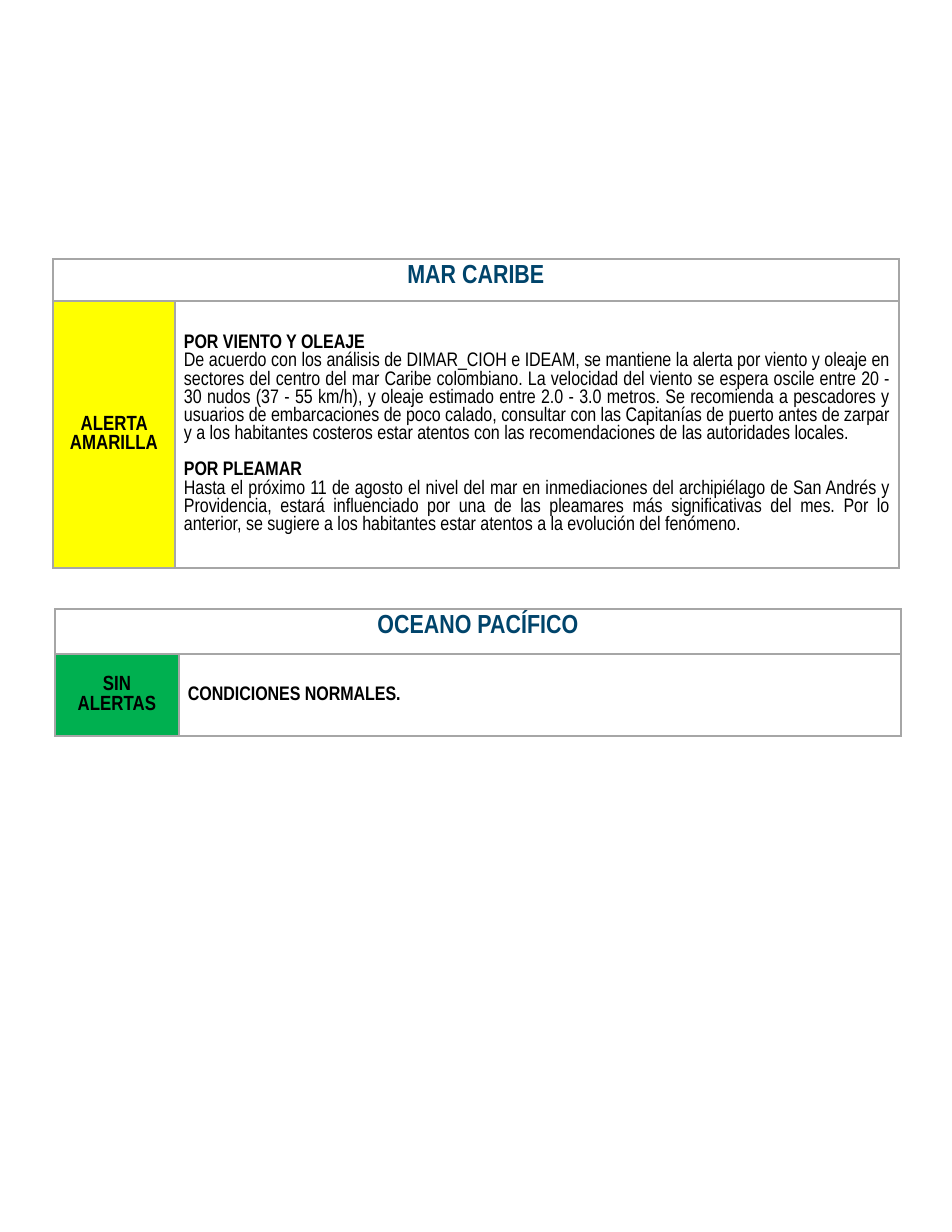
from lxml.etree import SubElement
from pptx import Presentation
from pptx.dml.color import RGBColor
from pptx.enum.text import MSO_ANCHOR as Anchor, PP_ALIGN as Align
from pptx.oxml.ns import qn
from pptx.util import Pt

PX = 6808
SLIDE_SIZE = (952, 1232)
BORDER = "A6A6A6"

WIND = (
    "De acuerdo con los análisis de DIMAR_CIOH e IDEAM, se mantiene la alerta por viento y oleaje en "
    "sectores del centro del mar Caribe colombiano. La velocidad del viento se espera oscile entre 20 - "
    "30 nudos (37 - 55 km/h), y oleaje estimado entre 2.0 - 3.0 metros. Se recomienda a pescadores y "
    "usuarios de embarcaciones de poco calado, consultar con las Capitanías de puerto antes de zarpar "
    "y a los habitantes costeros estar atentos con las recomendaciones de las autoridades locales."
)
TIDE = (
    "Hasta el próximo 11 de agosto el nivel del mar en inmediaciones del archipiélago de San Andrés y "
    "Providencia, estará influenciado por una de las pleamares más significativas del mes. Por lo "
    "anterior, se sugiere a los habitantes estar atentos a la evolución del fenómeno."
)

SEAS = [
    {"title": "OCEANO PACÍFICO", "alert": "SIN ALERTAS", "fill": "00B050",
     "at": (55, 609), "columns": (124, 722), "rows": (45, 82),
     "advice": [("CONDICIONES NORMALES.", True)]},
    {"title": "MAR CARIBE", "alert": "ALERTA AMARILLA", "fill": "FFFF00",
     "at": (53, 259), "columns": (122, 724), "rows": (42, 267),
     "advice": [("POR VIENTO Y OLEAJE", True), (WIND, False),
                ("POR PLEAMAR", True), (TIDE, False)]},
]

TITLE = {"size": 14, "color": "00446B", "align": Align.CENTER,
         "anchor": Anchor.TOP, "margins": (11, 5)}
ALERT = {"size": 11, "color": "000000", "align": Align.CENTER,
         "anchor": Anchor.MIDDLE, "margins": (9, 4)}
ADVICE = {**ALERT, "size": 10.5, "align": Align.JUSTIFY}


def px(length):
    return length * PX


def color(value):
    return RGBColor.from_string(value)


def set_borders(cell):
    properties = cell._tc.get_or_add_tcPr()
    for side in ("lnL", "lnR", "lnT", "lnB"):
        line = SubElement(properties, qn(f"a:{side}"), w=str(Pt(1)))
        SubElement(SubElement(line, qn("a:solidFill")), qn("a:srgbClr"), val=BORDER)


def write_cell(cell, texts, look):
    across, down = look["margins"]
    layout = {"margin_left": px(across), "margin_right": px(across),
              "margin_top": px(down), "margin_bottom": px(down),
              "vertical_anchor": look["anchor"]}
    for name, value in layout.items():
        setattr(cell, name, value)
    frame = cell.text_frame
    for index, (text, bold) in enumerate(texts):
        paragraph = frame.add_paragraph() if index else frame.paragraphs[0]
        paragraph.alignment = look["align"]
        if index and bold:
            paragraph.space_before = Pt(9.8)
        run = paragraph.add_run()
        run.text = text
        for name, value in {"name": "Arial Narrow", "size": Pt(look["size"]), "bold": bold}.items():
            setattr(run.font, name, value)
        run.font.color.rgb = color(look["color"])


def add_sea(slide, sea):
    columns, rows = sea["columns"], sea["rows"]
    bounds = [px(length) for length in (*sea["at"], sum(columns), sum(rows))]
    table = slide.shapes.add_table(len(rows), len(columns), *bounds).table
    table.first_row = table.horz_banding = False
    for column, width in zip(table.columns, columns):
        column.width = px(width)
    for row, height in zip(table.rows, rows):
        row.height = px(height)
    for cell in table.iter_cells():
        set_borders(cell)
        cell.fill.background()
    title, alert, advice = table.cell(0, 0), table.cell(1, 0), table.cell(1, 1)
    title.merge(table.cell(0, 1))
    alert.fill.solid()
    alert.fill.fore_color.rgb = color(sea["fill"])
    write_cell(title, [(sea["title"], True)], TITLE)
    write_cell(alert, [(sea["alert"], True)], ALERT)
    write_cell(advice, sea["advice"], ADVICE)


def main():
    presentation = Presentation()
    presentation.slide_width, presentation.slide_height = map(px, SLIDE_SIZE)
    slide = presentation.slides.add_slide(presentation.slide_layouts[6])
    for sea in SEAS:
        add_sea(slide, sea)
    presentation.save("out.pptx")


if __name__ == "__main__":
    main()
